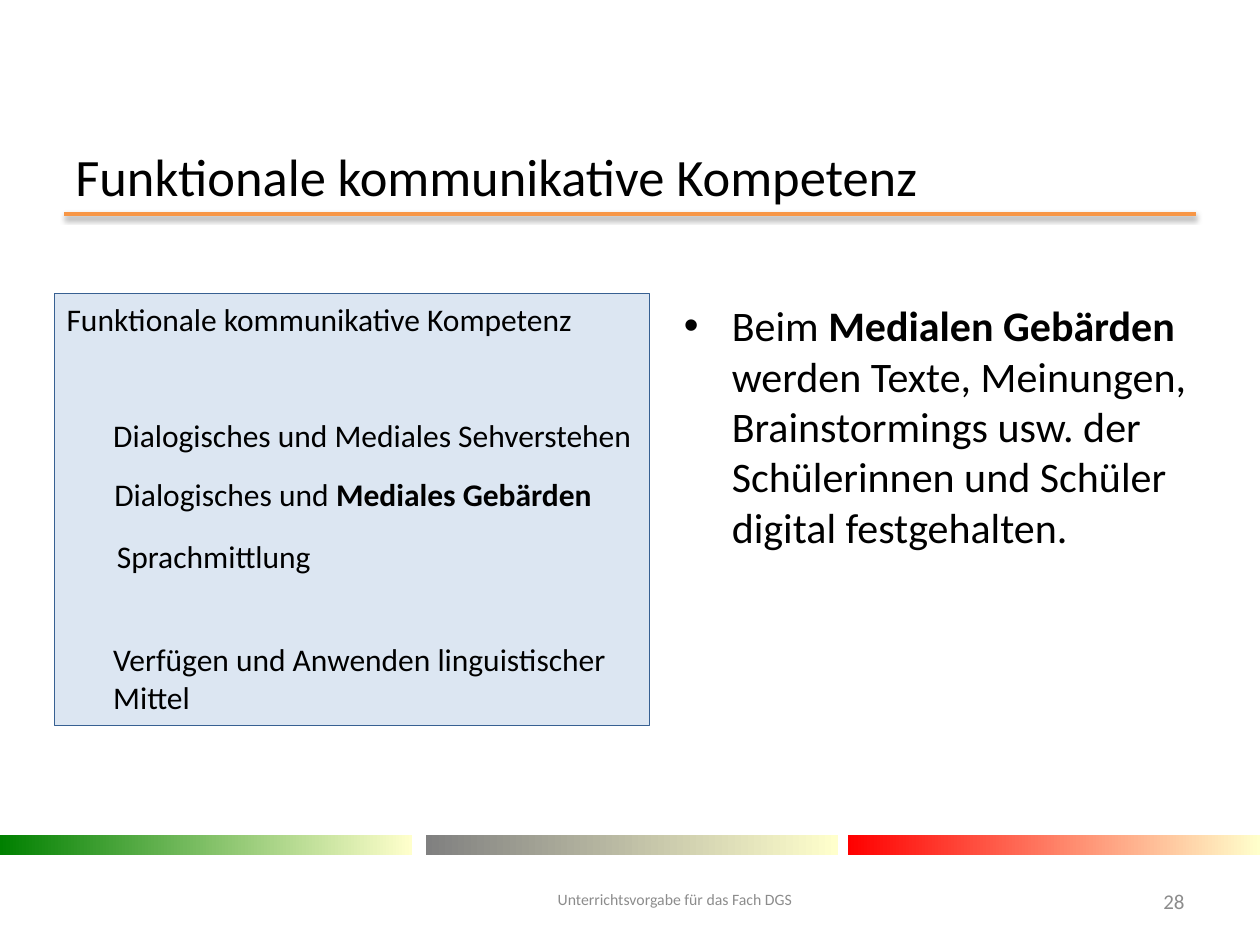
from lxml.etree import SubElement
from pptx import Presentation
from pptx.dml.color import RGBColor
from pptx.enum.shapes import MSO_CONNECTOR, MSO_SHAPE
from pptx.enum.text import MSO_ANCHOR, PP_ALIGN
from pptx.oxml.ns import qn
from pptx.util import Inches, Pt

COLORS = {
    "text": "000000", "muted": "8C8C8C", "rule": "F79646",
    "panel": "DCE6F2", "panel_edge": "376092", "white": "FFFFFF",
    "green": "008000", "gray": "808080", "red": "FF0000", "cream": "FFFFCC",
}
COLUMNS, ROWS = 100, 75


def rgb(name):
    return RGBColor.from_string(COLORS[name])


def write(frame, runs, size=18, color="text", align=PP_ALIGN.LEFT,
          anchor=MSO_ANCHOR.TOP, spacing=None, bullet=None, indent=0.38):
    """Fill a text frame with one paragraph of (text, bold) runs."""
    frame.word_wrap = True
    frame.vertical_anchor = anchor
    paragraph = frame.paragraphs[0]
    paragraph.alignment = align
    if spacing:
        paragraph.line_spacing = spacing
    if bullet:
        properties = paragraph._p.get_or_add_pPr()
        properties.set("marL", str(Inches(indent)))
        properties.set("indent", str(-Inches(indent)))
        SubElement(properties, qn("a:buFont"), typeface="Arial")
        SubElement(properties, qn("a:buChar"), char=bullet)
    for text, bold in runs:
        run = paragraph.add_run()
        run.text = text
        run.font.name = "Calibri"
        run.font.size = Pt(size)
        run.font.bold = bold
        run.font.color.rgb = rgb(color)


class SlideBuilder:
    def __init__(self, presentation):
        self.slide = presentation.slides.add_slide(presentation.slide_layouts[6])
        self.column = presentation.slide_width / COLUMNS
        self.row = presentation.slide_height / ROWS

    def place(self, left, top, width, height):
        return (round(left * self.column), round(top * self.row),
                round(width * self.column), round(height * self.row))

    def text(self, area, *runs, **style):
        box = self.slide.shapes.add_textbox(*self.place(*area))
        write(box.text_frame, runs, **style)

    def rectangle(self, area, fill, edge=None, fade=None):
        shape = self.slide.shapes.add_shape(MSO_SHAPE.RECTANGLE, *self.place(*area))
        shape.shadow.inherit = False
        if fade:
            shape.fill.gradient()
            shape.fill.gradient_angle = 0
            for stop, color in zip(shape.fill.gradient_stops, (fill, fade)):
                stop.color.rgb = rgb(color)
        else:
            shape.fill.solid()
            shape.fill.fore_color.rgb = rgb(fill)
        if edge:
            shape.line.color.rgb = rgb(edge)
            shape.line.width = Pt(0.25)
        else:
            shape.line.fill.background()
        return shape

    def shadowed_rule(self, left, right, row, color, width):
        x, y, length, _ = self.place(left, row, right - left, 0)
        rule = self.slide.shapes.add_connector(MSO_CONNECTOR.STRAIGHT, x, y, x + length, y)
        rule.line.color.rgb = rgb(color)
        rule.line.width = Pt(width)
        effects = SubElement(rule._element.spPr, qn("a:effectLst"))
        shadow = SubElement(effects, qn("a:outerShdw"), blurRad=str(Pt(3.1)),
                            dist=str(Pt(1.6)), dir="5400000", rotWithShape="0")
        tint = SubElement(shadow, qn("a:srgbClr"), val=COLORS["text"])
        SubElement(tint, qn("a:alpha"), val="38000")


def main():
    presentation = Presentation()
    presentation.slide_width, presentation.slide_height = Inches(10), Inches(7.5)
    page = SlideBuilder(presentation)

    # Title rule and colour bands
    page.shadowed_rule(5.1, 94.9, 17, "rule", 2)
    for left, color in ((0, "green"), (33.8, "gray"), (67.3, "red")):
        page.rectangle((left, 66.3, 32.7, 1.6), color, fade="cream")

    # Title
    page.text((5, 12.3, 90, 3.9), ("Funktionale kommunikative Kompetenz", False),
              size=30, anchor=MSO_ANCHOR.MIDDLE, spacing=0.9)

    # Explanation on the right
    explanation = page.rectangle((53.3, 23.3, 46.2, 39.4), "white")
    write(explanation.text_frame, (
        ("Beim ", False), ("Medialen Gebärden", True),
        (" werden Texte, Meinungen, Brainstormings usw. der Schülerinnen"
         " und Schüler digital festgehalten.", False)), size=24, bullet="•")

    # Footer and slide number
    footer_style = {"color": "muted", "anchor": MSO_ANCHOR.MIDDLE}
    page.text((37.4, 69.5, 32.3, 4), ("Unterrichtsvorgabe für das Fach DGS", False),
              size=9, align=PP_ALIGN.CENTER, spacing=0.9, **footer_style)
    page.text((88.6, 69.5, 6.4, 4), ("28", False),
              size=12, align=PP_ALIGN.RIGHT, **footer_style)

    # Competence panel with its areas
    panel = page.rectangle((4.3, 23.3, 47.2, 34.3), "panel", edge="panel_edge")
    write(panel.text_frame, [("Funktionale kommunikative Kompetenz", False)])
    competences = (
        ((8, 32.5, 44.2, 4), ("Dialogisches und Mediales Sehverstehen", False)),
        ((8.1, 37.2, 42.6, 4), ("Dialogisches und ", False), ("Mediales Gebärden", True)),
        ((8.3, 42.1, 42.6, 4), ("Sprachmittlung", False)),
        ((8, 50.3, 42.6, 7.1), ("Verfügen und Anwenden linguistischer Mittel", False)),
    )
    for area, *runs in competences:
        page.text(area, *runs)

    presentation.save("out.pptx")


if __name__ == "__main__":
    main()
